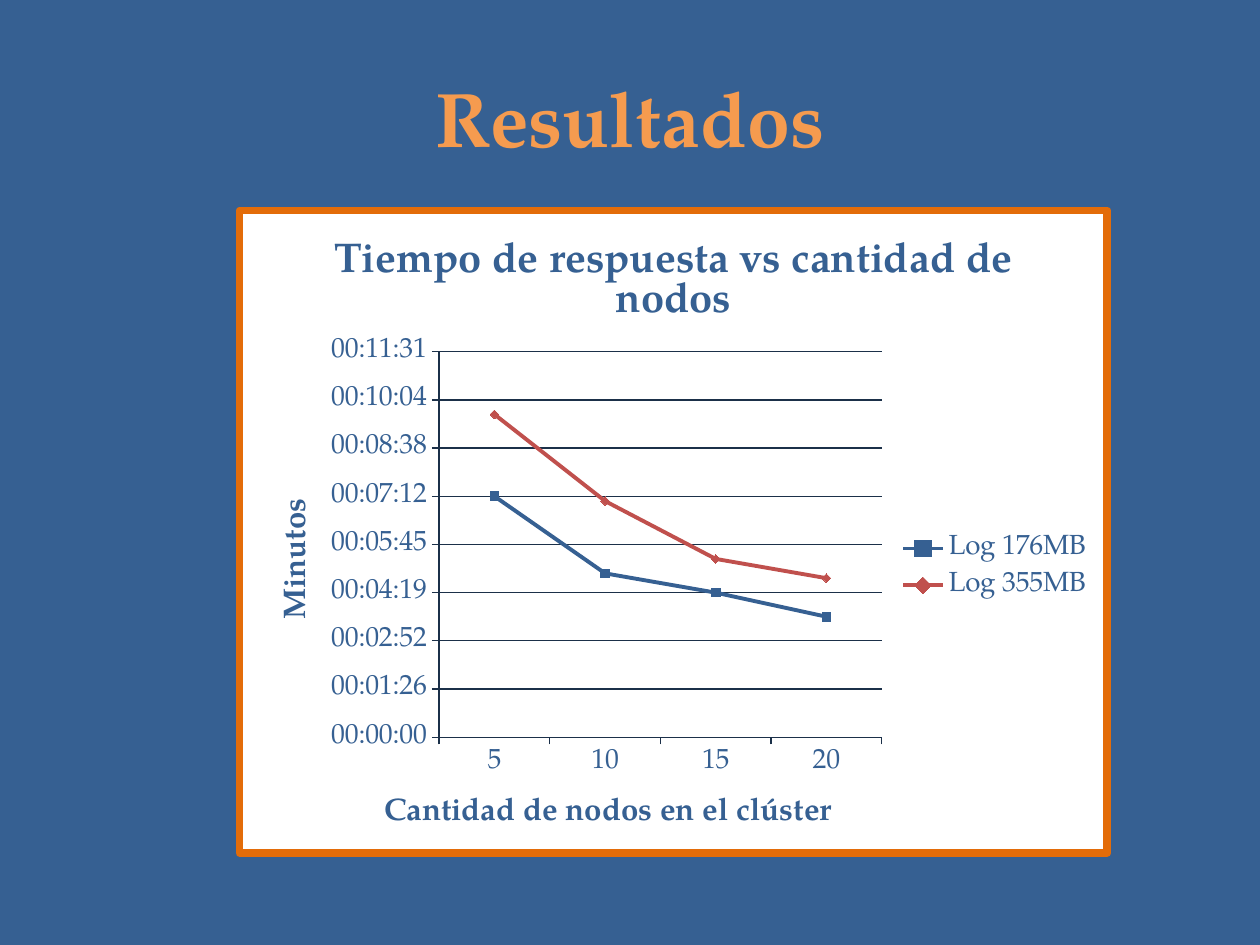
from dataclasses import dataclass

from lxml import etree
from pptx import Presentation
from pptx.chart.data import CategoryChartData
from pptx.dml.color import RGBColor
from pptx.enum.chart import XL_CHART_TYPE, XL_LEGEND_POSITION, XL_MARKER_STYLE, XL_TICK_MARK
from pptx.enum.text import MSO_ANCHOR, PP_ALIGN
from pptx.oxml import parse_xml
from pptx.oxml.ns import nsdecls, qn
from pptx.util import Pt

LINE_MARKERS = XL_CHART_TYPE.LINE_MARKERS
RIGHT = XL_LEGEND_POSITION.RIGHT
SQUARE, DIAMOND = XL_MARKER_STYLE.SQUARE, XL_MARKER_STYLE.DIAMOND
OUTSIDE = XL_TICK_MARK.OUTSIDE
MIDDLE, CENTER = MSO_ANCHOR.MIDDLE, PP_ALIGN.CENTER

TITLE = "Resultados"
CHART_TITLE = "Tiempo de respuesta vs cantidad de nodos"
NODES_TITLE = "Cantidad de nodos en el clúster"
TIME_TITLE = "Minutos"
NODES = ["5", "10", "15", "20"]
# Times are fractions of a day, shown as hh:mm:ss
SERIES = [
    ("Log 176MB", [0.005, 0.0034, 0.003, 0.0025], "366092", SQUARE),
    ("Log 355MB", [0.0067, 0.0049, 0.0037, 0.0033], "C0504D", DIAMOND),
]

TITLE_BOX = (36, 21.6, 648, 90)
CHART_BOX = (134.64, 118.08, 500.4, 371.52)
# Fractions of the chart: left, top, width, height
PLOT_AREA = (0.23, 0.22, 0.51, 0.6)
LEGEND_AREA = (0.76, 0.49, 0.22, 0.13)
NODES_TITLE_AT = (0.16, 0.9)
TIME_TITLE_AT = (0.04, 0.44)


@dataclass(frozen=True)
class Theme:
    font: str = "TeX Gyre Pagella"
    blue: str = "366092"
    orange: str = "F59B4F"
    border: str = "E36C09"
    paper: str = "FFFFFF"
    axis: str = "1B3049"
    title: int = 44
    chart_title: int = 24
    axis_title: int = 18
    label: int = 16
    base: int = 10
    border_width: float = 4.5
    axis_width: float = 0.75
    series_width: float = 2.25
    marker: int = 5


THEME = Theme()


def rgb(value):
    return RGBColor.from_string(value)


def set_font(font, size, color=THEME.blue, bold=False):
    font.name, font.size, font.bold = THEME.font, Pt(size), bold
    font.color.rgb = rgb(color)


def set_line(line, color, width):
    line.color.rgb = rgb(color)
    line.width = Pt(width)


def set_layout(element, index, area, inner=False):
    """Place a chart part by fractions of the chart; index is its child slot."""
    for old in element.findall(qn("c:layout")):
        element.remove(old)
    layout = etree.Element(qn("c:layout"))
    manual = etree.SubElement(layout, qn("c:manualLayout"))
    settings = [("layoutTarget", "inner")] if inner else []
    settings += [("xMode", "edge"), ("yMode", "edge")]
    settings += zip("xywh", area)
    for name, value in settings:
        etree.SubElement(manual, qn(f"c:{name}")).set("val", str(value))
    element.insert(index, layout)


def set_heading(heading, text, size):
    tf = heading.text_frame
    tf.text = text
    set_font(tf.paragraphs[0].font, size, bold=True)


def style_axis(axis, title, position):
    set_heading(axis.axis_title, title, THEME.axis_title)
    set_layout(axis.axis_title._element, 1, position)
    set_font(axis.tick_labels.font, THEME.label)
    set_line(axis.format.line, THEME.axis, THEME.axis_width)
    axis.major_tick_mark = OUTSIDE


def frame_chart(chart):
    """Give the whole chart its fill and border."""
    frame = parse_xml(
        f'<c:spPr {nsdecls("c", "a")}>'
        f'<a:solidFill><a:srgbClr val="{THEME.paper}"/></a:solidFill>'
        f'<a:ln w="{Pt(THEME.border_width)}"><a:solidFill>'
        f'<a:srgbClr val="{THEME.border}"/></a:solidFill><a:round/></a:ln></c:spPr>'
    )
    chart.element.find(qn("c:chart")).addnext(frame)


def add_title(slide):
    s = slide.shapes.title
    s.left, s.top, s.width, s.height = map(Pt, TITLE_BOX)
    tf = s.text_frame
    tf.text = TITLE
    tf.vertical_anchor = MIDDLE
    p = tf.paragraphs[0]
    p.alignment = CENTER
    set_font(p.font, THEME.title, THEME.orange, bold=True)


def add_times_chart(slide):
    data = CategoryChartData(number_format="hh:mm:ss")
    data.categories = NODES
    for name, values, _, _ in SERIES:
        data.add_series(name, values)
    chart = slide.shapes.add_chart(LINE_MARKERS, *map(Pt, CHART_BOX), data).chart
    set_font(chart.font, THEME.base)
    frame_chart(chart)
    set_heading(chart.chart_title, CHART_TITLE, THEME.chart_title)
    set_layout(chart.element.find(".//" + qn("c:plotArea")), 0, PLOT_AREA, inner=True)

    style_axis(chart.category_axis, NODES_TITLE, NODES_TITLE_AT)
    times = chart.value_axis
    style_axis(times, TIME_TITLE, TIME_TITLE_AT)
    body = times.axis_title._element.find(".//" + qn("a:bodyPr"))
    body.set("rot", "-5400000")
    body.set("vert", "horz")
    times.minimum_scale, times.maximum_scale, times.major_unit = 0, 0.008, 0.001
    times.tick_labels.number_format = "hh:mm:ss"
    times.tick_labels.number_format_is_linked = False
    set_line(times.major_gridlines.format.line, THEME.axis, THEME.axis_width)

    chart.has_legend = True
    chart.legend.position = RIGHT
    chart.legend.include_in_layout = False
    set_font(chart.legend.font, THEME.label)
    set_layout(chart.legend._element, 1, LEGEND_AREA)

    plot = chart.plots[0]
    plot.vary_by_categories = False
    for series, (_, _, color, style) in zip(plot.series, SERIES):
        series.smooth = False
        set_line(series.format.line, color, THEME.series_width)
        marker = series.marker
        marker.style, marker.size = style, THEME.marker
        marker.format.fill.solid()
        marker.format.fill.fore_color.rgb = rgb(color)
        marker.format.line.color.rgb = rgb(color)


def main():
    prs = Presentation()
    prs.slide_width, prs.slide_height = Pt(720), Pt(540)
    slide = prs.slides.add_slide(prs.slide_layouts.get_by_name("Title Only"))
    slide.background.fill.solid()
    slide.background.fill.fore_color.rgb = rgb(THEME.blue)
    add_title(slide)
    add_times_chart(slide)
    prs.save("out.pptx")


if __name__ == "__main__":
    main()
